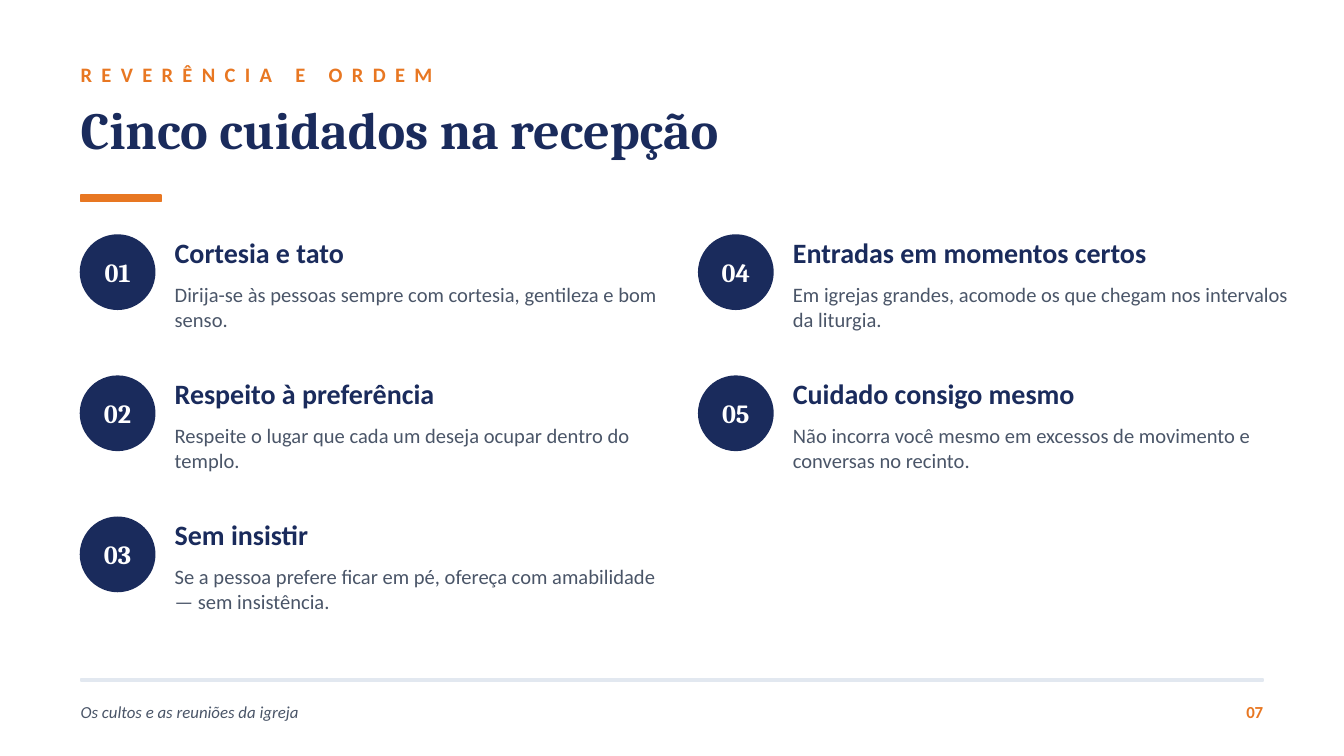
from pptx import Presentation
from pptx.dml.color import RGBColor
from pptx.enum.shapes import MSO_SHAPE
from pptx.enum.text import MSO_ANCHOR, MSO_AUTO_SIZE, PP_ALIGN
from pptx.util import Inches, Pt

NAVY, ORANGE, SLATE, MIST, WHITE = "1A2B5C", "E87722", "4A5568", "E2E8F0", "FFFFFF"
SANS, SERIF = "Calibri", "Cambria"

CARES = [
    ("Cortesia e tato",
     "Dirija-se às pessoas sempre com cortesia, gentileza e bom senso."),
    ("Respeito à preferência",
     "Respeite o lugar que cada um deseja ocupar dentro do templo."),
    ("Sem insistir",
     "Se a pessoa prefere ficar em pé, ofereça com amabilidade — sem insistência."),
    ("Entradas em momentos certos",
     "Em igrejas grandes, acomode os que chegam nos intervalos da liturgia."),
    ("Cuidado consigo mesmo",
     "Não incorra você mesmo em excessos de movimento e conversas no recinto."),
]
ROWS = 3


def color(hex_string):
    return RGBColor.from_string(hex_string)


def write(holder, text, size, hex_string, font=SANS, bold=False, italic=False,
          align=PP_ALIGN.LEFT, anchor=MSO_ANCHOR.TOP):
    frame = holder.text_frame
    frame.text = text
    frame.word_wrap = True
    frame.auto_size = MSO_AUTO_SIZE.NONE
    frame.vertical_anchor = anchor
    frame.margin_left = frame.margin_right = frame.margin_top = frame.margin_bottom = 0
    paragraph = frame.paragraphs[0]
    paragraph.alignment = align
    run = paragraph.runs[0]
    run.font.name, run.font.size = font, Pt(size)
    run.font.bold, run.font.italic = bold, italic
    run.font.color.rgb = color(hex_string)
    return run


def add_label(slide, left, top, width, height, text, size, hex_string, **style):
    label = slide.shapes.add_textbox(
        Inches(left), Inches(top), Inches(width), Inches(height))
    return write(label, text, size, hex_string, **style)


def add_solid(slide, preset, left, top, width, height, hex_string):
    solid = slide.shapes.add_shape(
        preset, Inches(left), Inches(top), Inches(width), Inches(height))
    solid.shadow.inherit = False
    solid.fill.solid()
    solid.fill.fore_color.rgb = color(hex_string)
    solid.line.color.rgb = color(hex_string)
    solid.line.width = Pt(1)
    return solid


def add_header(slide, left, top):
    kicker = add_label(slide, left, top, 5, 0.3, "REVERÊNCIA E ORDEM", 11, ORANGE,
                       bold=True, anchor=MSO_ANCHOR.MIDDLE)
    kicker.font._element.set("spc", "500")
    title = slide.shapes.title
    title.left, title.top = Inches(left), Inches(top + 0.32)
    title.width, title.height = Inches(9), Inches(0.6)
    write(title, "Cinco cuidados na recepção", 28, NAVY, font=SERIF, bold=True)
    add_solid(slide, MSO_SHAPE.RECTANGLE, left, top + 1.05, 0.6, 0.05, ORANGE)


def add_care(slide, left, top, number, heading, advice):
    badge = add_solid(slide, MSO_SHAPE.OVAL, left, top, 0.55, 0.55, NAVY)
    write(badge, f"{number:02d}", 14, WHITE, font=SERIF, bold=True,
          align=PP_ALIGN.CENTER, anchor=MSO_ANCHOR.MIDDLE)
    add_label(slide, left + 0.7, top, 3.5, 0.35, heading, 15, NAVY, bold=True)
    add_label(slide, left + 0.7, top + 0.35, 3.7, 0.65, advice, 11, SLATE)


def add_cares(slide, left, top, column_step, row_step):
    for index, (heading, advice) in enumerate(CARES):
        column, row = divmod(index, ROWS)
        add_care(slide, left + column * column_step, top + row * row_step,
                 index + 1, heading, advice)


def add_footer(slide, left, top, width):
    add_solid(slide, MSO_SHAPE.RECTANGLE, left, top, width, 0.02, MIST)
    add_label(slide, left, top + 0.1, 6, 0.3, "Os cultos e as reuniões da igreja",
              9, SLATE, italic=True, anchor=MSO_ANCHOR.MIDDLE)
    add_label(slide, left + width - 0.5, top + 0.1, 0.5, 0.3, "07", 9, ORANGE,
              bold=True, align=PP_ALIGN.RIGHT, anchor=MSO_ANCHOR.MIDDLE)


def main():
    presentation = Presentation()
    presentation.slide_width = Inches(10)
    presentation.slide_height = presentation.slide_width * 9 // 16
    slide = presentation.slides.add_slide(presentation.slide_layouts[5])
    slide.background.fill.solid()
    slide.background.fill.fore_color.rgb = color(WHITE)
    add_header(slide, 0.6, 0.4)
    add_cares(slide, 0.6, 1.75, 4.6, 1.05)
    add_footer(slide, 0.6, 5.05, 8.8)
    presentation.save("out.pptx")


if __name__ == "__main__":
    main()
